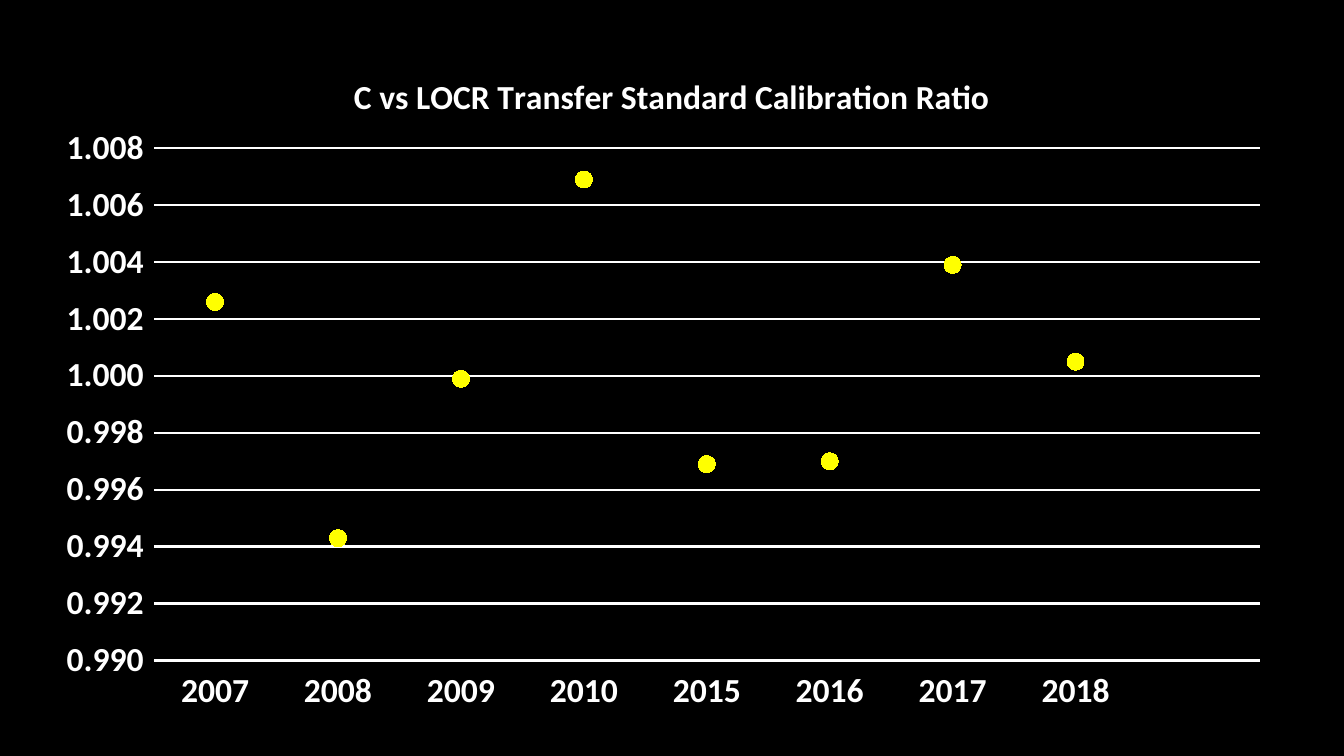
from typing import NamedTuple

from lxml import etree
from pptx import Presentation
from pptx.chart.axis import _BaseAxis
from pptx.chart.data import CategoryChartData
from pptx.dml.color import RGBColor
from pptx.enum.chart import XL_CHART_TYPE, XL_MARKER_STYLE, XL_TICK_LABEL_POSITION, XL_TICK_MARK
from pptx.oxml.ns import qn
from pptx.text.text import Font
from pptx.util import Cm, Pt

LINE_MARKERS = XL_CHART_TYPE.LINE_MARKERS
CIRCLE = XL_MARKER_STYLE.CIRCLE
LABELS_LOW = XL_TICK_LABEL_POSITION.LOW
NO_TICK = XL_TICK_MARK.NONE

BLACK = "000000"
WHITE = "FFFFFF"
YELLOW = "FFFF00"
FONT_NAME = "Calibri"


class Calibration(NamedTuple):
    year: str
    ratio: float | None


CALIBRATIONS = [
    Calibration("2007", 1.0026),
    Calibration("2008", 0.9943),
    Calibration("2009", 0.9999),
    Calibration("2010", 1.0069),
    Calibration("2015", 0.9969),
    Calibration("2016", 0.997),
    Calibration("2017", 1.0039),
    Calibration("2018", 1.0005),
    Calibration("", None),
]


def color(value: str) -> RGBColor:
    return RGBColor.from_string(value)


def style_font(font: Font, size: float, bold: bool) -> None:
    font.name = FONT_NAME
    font.size = Pt(size)
    font.bold = bold
    font.color.rgb = color(WHITE)


def style_axis(axis: _BaseAxis) -> None:
    axis.major_tick_mark = NO_TICK
    axis.minor_tick_mark = NO_TICK
    axis.tick_label_position = LABELS_LOW
    style_font(axis.tick_labels.font, 24, True)


def place(parent: etree._Element, index: int, **fractions: float) -> None:
    for old in parent.findall(qn("c:layout")):
        parent.remove(old)
    layout = etree.Element(qn("c:layout"))
    parent.insert(index, layout)
    manual = etree.SubElement(layout, qn("c:manualLayout"))
    settings = {"xMode": "edge", "yMode": "edge", **fractions}
    if "w" in fractions:
        settings = {"layoutTarget": "inner", **settings}
    for tag, value in settings.items():
        etree.SubElement(manual, qn(f"c:{tag}")).set("val", str(value))


def main() -> None:
    deck = Presentation()
    deck.slide_width = Cm(33.87)
    deck.slide_height = Cm(19.05)
    slide = deck.slides.add_slide(deck.slide_layouts[6])
    slide.background.fill.solid()
    slide.background.fill.fore_color.rgb = color(BLACK)

    ratios = CategoryChartData(number_format="#,##0.000")
    ratios.categories = [calibration.year for calibration in CALIBRATIONS]
    ratios.add_series("Series 1", [calibration.ratio for calibration in CALIBRATIONS])
    chart = slide.shapes.add_chart(
        LINE_MARKERS, Cm(1.22), Cm(1.12), Cm(31.19), Cm(16.99), ratios
    ).chart
    chart.has_legend = False
    style_font(chart.font, 10, False)

    chart.has_title = True
    heading = chart.chart_title.text_frame
    heading.text = "C vs LOCR Transfer Standard Calibration Ratio"
    style_font(heading.paragraphs[0].runs[0].font, 24, True)
    place(chart.chart_title.element, 1, x=0.242, y=0.035)
    place(chart.element.find(".//" + qn("c:plotArea")), 0, x=0.085, y=0.154, w=0.894, h=0.76)

    years = chart.category_axis
    style_axis(years)
    years.format.line.color.rgb = color(WHITE)
    years.format.line.width = Pt(0.75)

    scale = chart.value_axis
    style_axis(scale)
    scale.minimum_scale = 0.99
    scale.maximum_scale = 1.008
    scale.major_unit = 0.002
    scale.tick_labels.number_format = "#,##0.000"
    scale.tick_labels.number_format_is_linked = False
    scale.format.line.fill.background()
    scale.has_major_gridlines = True
    scale.major_gridlines.format.line.color.rgb = color(WHITE)
    scale.major_gridlines.format.line.width = Pt(1.75)

    chart.plots[0].vary_by_categories = False
    series = chart.plots[0].series[0]
    series.smooth = False
    series.format.line.fill.background()
    series.marker.style = CIRCLE
    series.marker.size = 12
    series.marker.format.fill.solid()
    series.marker.format.fill.fore_color.rgb = color(YELLOW)
    series.marker.format.line.fill.background()

    deck.save("out.pptx")


if __name__ == "__main__":
    main()
